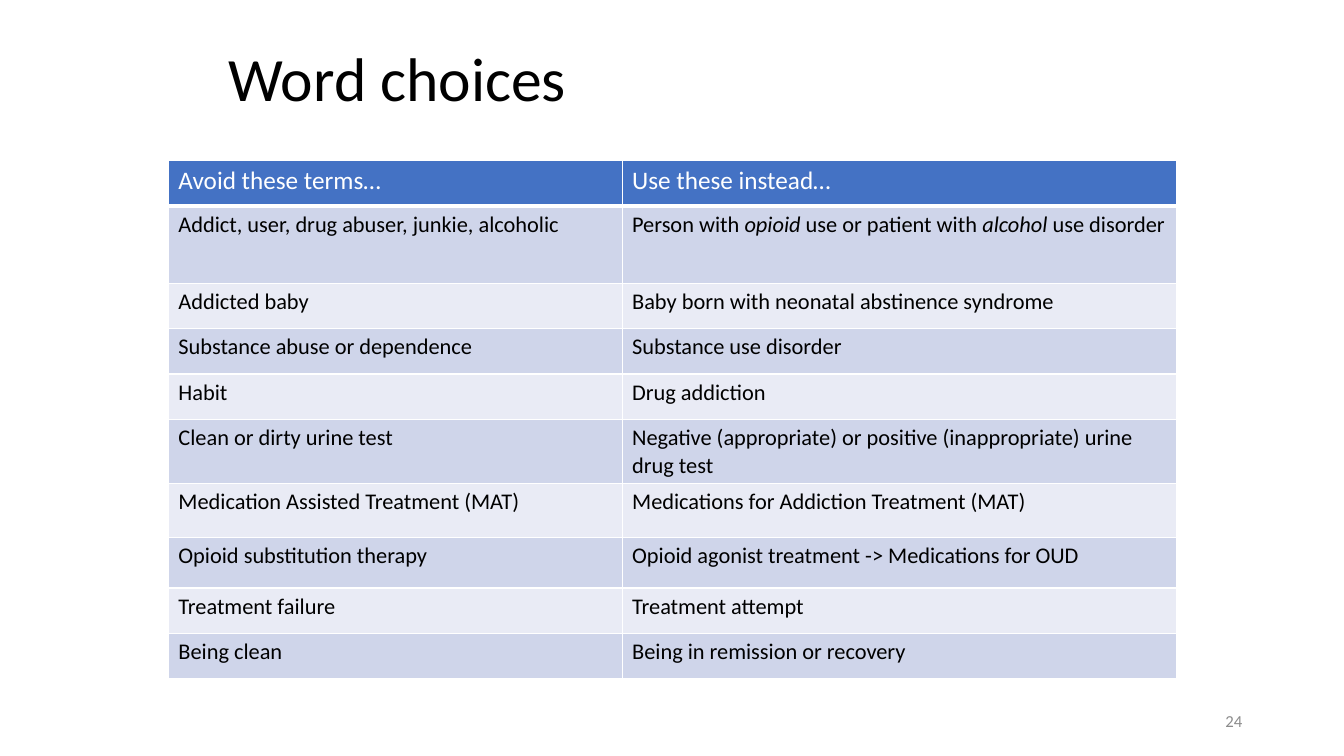
from lxml.etree import SubElement
from pptx import Presentation
from pptx.dml.color import RGBColor
from pptx.enum.text import MSO_ANCHOR, PP_ALIGN
from pptx.oxml.ns import qn
from pptx.util import Inches, Pt

FONT = "Calibri"
COLUMN_WIDTHS = (4.5, 5.5)
ROW_HEIGHTS = (0.45, 0.77, 0.45, 0.45, 0.45, 0.45, 0.54, 0.5, 0.45, 0.45)
BAND_FILLS = ("E9EBF5", "CFD5EA")
WORD_PAIRS = (
    ("Avoid these terms…", "Use these instead…"),
    ("Addict, user, drug abuser, junkie, alcoholic",
     "Person with *opioid* use or patient with *alcohol* use disorder"),
    ("Addicted baby", "Baby born with neonatal abstinence syndrome"),
    ("Substance abuse or dependence", "Substance use disorder"),
    ("Habit", "Drug addiction"),
    ("Clean or dirty urine test",
     "Negative (appropriate) or positive (inappropriate) urine drug test"),
    ("Medication Assisted Treatment (MAT)", "Medications for Addiction Treatment (MAT)"),
    ("Opioid substitution therapy", "Opioid agonist treatment -> Medications for OUD"),
    ("Treatment failure", "Treatment attempt"),
    ("Being clean", "Being in remission or recovery"),
)


def paint(color_format, color):
    """Apply a hex colour to a font colour or a fill's foreground."""
    color_format.rgb = RGBColor.from_string(color)


def write(para, text, size, color):
    """Fill a paragraph with text; parts between asterisks are italic."""
    para.font.name = FONT
    para.font.size = Pt(size)
    para.font.bold = False
    paint(para.font.color, color)
    for index, part in enumerate(text.split("*")):
        span = para.add_run()
        span.text = part
        if index % 2:
            span.font.italic = True


def add_label(page, box, text, size, color, align=PP_ALIGN.LEFT, spacing=1.0):
    """Place one vertically centred line of text in a box."""
    frame = page.shapes.add_textbox(*map(Inches, box)).text_frame
    frame.word_wrap = True
    frame.vertical_anchor = MSO_ANCHOR.MIDDLE
    para = frame.paragraphs[0]
    para.alignment = align
    para.line_spacing = spacing
    write(para, text, size, color)


def add_borders(cell, top, bottom):
    """Draw white cell borders with the given top and bottom widths in points."""
    properties = cell._tc.get_or_add_tcPr()
    for side, width in (("L", 1), ("R", 1), ("T", top), ("B", bottom)):
        line = SubElement(properties, qn(f"a:ln{side}"), w=str(Pt(width)))
        solid = SubElement(line, qn("a:solidFill"))
        SubElement(solid, qn("a:srgbClr"), val="FFFFFF")


def add_word_table(page, left, top):
    """Place the two-column table of terms with its top left corner at a point."""
    table = page.shapes.add_table(
        len(WORD_PAIRS), len(COLUMN_WIDTHS), Inches(left), Inches(top),
        Inches(sum(COLUMN_WIDTHS)), Inches(sum(ROW_HEIGHTS))).table
    for column, width in zip(table.columns, COLUMN_WIDTHS):
        column.width = Inches(width)
    for row_index, (row, height, pair) in enumerate(zip(table.rows, ROW_HEIGHTS, WORD_PAIRS)):
        row.height = Inches(height)
        header = row_index == 0
        for cell, text in zip(row.cells, pair):
            add_borders(cell, 3 if row_index == 1 else 1, 3 if header else 1)
            cell.fill.solid()
            paint(cell.fill.fore_color, "4472C4" if header else BAND_FILLS[row_index % 2])
            write(cell.text_frame.paragraphs[0], text,
                  18 if header else 16, "FFFFFF" if header else "000000")


def build_word_choices(deck):
    """Add the slide with its title, table and page number."""
    page = deck.slides.add_slide(deck.slide_layouts[6])
    add_label(page, (2.17, 0.18, 9, 1.25), "Word choices", 44, "000000", spacing=0.9)
    add_word_table(page, 1.67, 1.59)
    add_label(page, (9.42, 6.95, 3, 0.4), "24", 12, "8C8C8C", PP_ALIGN.RIGHT)


def main():
    """Build and save the deck."""
    deck = Presentation()
    deck.slide_width, deck.slide_height = Inches(13.33), Inches(7.5)
    build_word_choices(deck)
    deck.save("out.pptx")


if __name__ == "__main__":
    main()
